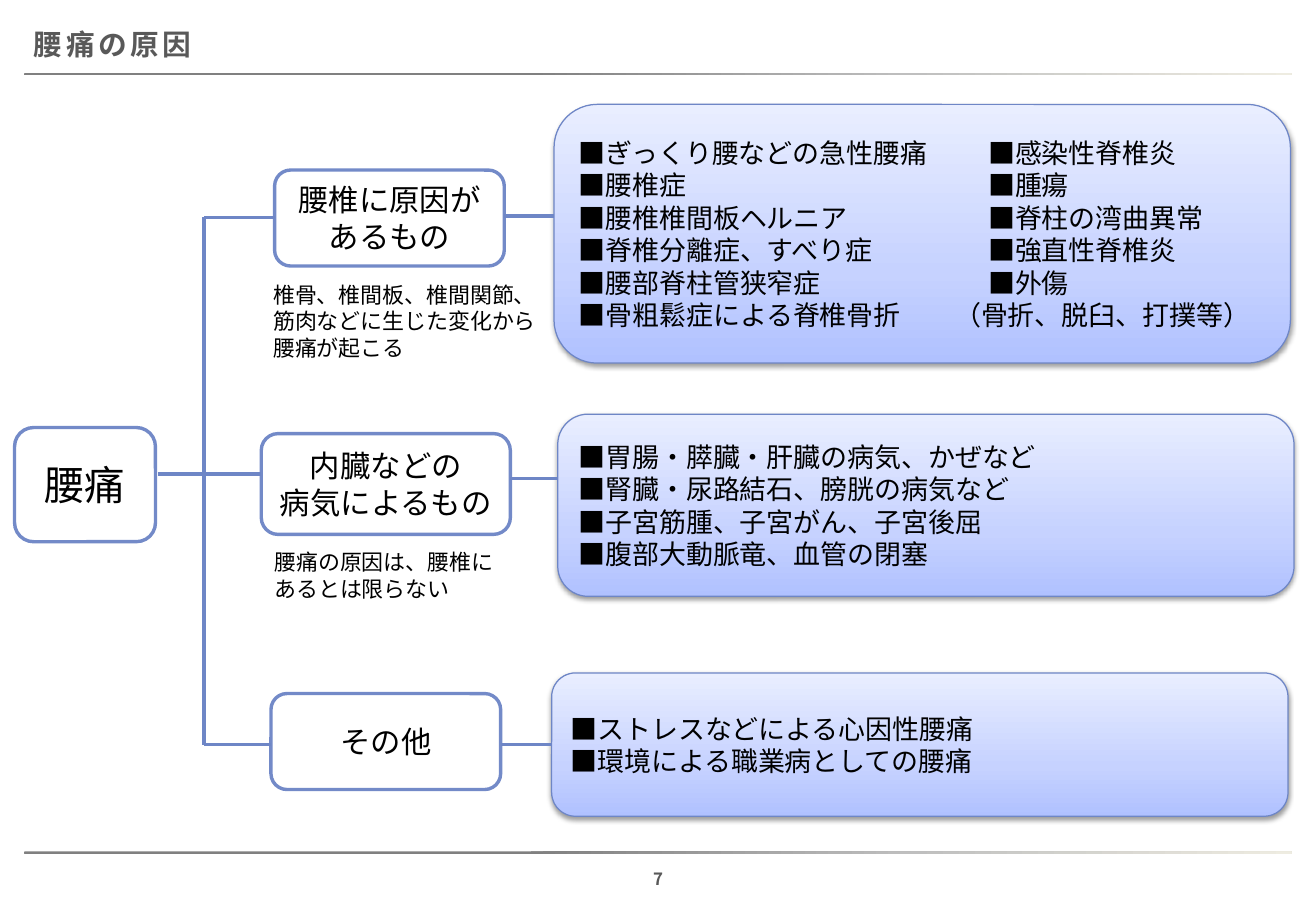
from lxml import etree
from pptx import Presentation
from pptx.dml.color import RGBColor
from pptx.enum.shapes import MSO_CONNECTOR, MSO_SHAPE
from pptx.enum.text import MSO_ANCHOR, PP_ALIGN
from pptx.oxml import parse_xml
from pptx.oxml.ns import nsdecls, qn
from pptx.util import Inches, Pt

ROUND = MSO_SHAPE.ROUNDED_RECTANGLE
STRAIGHT = MSO_CONNECTOR.STRAIGHT
CENTER, LEFT, JUSTIFY = PP_ALIGN.CENTER, PP_ALIGN.LEFT, PP_ALIGN.JUSTIFY
MIDDLE, TOP = MSO_ANCHOR.MIDDLE, MSO_ANCHOR.TOP
JP, LATIN = "Noto Sans CJK JP", "Calibri"
BLACK, GREY, WHITE = "000000", "595959", "FFFFFF"
BOX_LINE, LINK_LINE = "738AC8", "6E86C6"
BAR_STOPS = [(0, "808080"), (40, "808080"), (70, "BFBFBF"), (100, "EEECE1")]
PANEL_STOPS = [(0, "B0C1FF"), (35, "C6D2FF"), (100, "E9EEFF")]
TRUNK_X = 1.68

BRANCHES = [
    dict(cause=["腰椎に原因が", "あるもの"], box=(2.26, 1.4, 1.89, 0.79),
         panel=(4.56, 0.86, 6.06, 2.13), stem_y=1.79, link_y=1.78,
         note="椎骨、椎間板、椎間関節、筋肉などに生じた変化から腰痛が起こる",
         note_box=(2.15, 2.27, 2.36, 0.76),
         items=["■ぎっくり腰などの急性腰痛\t■感染性脊椎炎",
                "■腰椎症\t■腫瘍",
                "■腰椎椎間板ヘルニア\t■脊柱の湾曲異常",
                "■脊椎分離症、すべり症\t■強直性脊椎炎",
                "■腰部脊柱管狭窄症\t■外傷",
                "■骨粗鬆症による脊椎骨折\t（骨折、脱臼、打撲等）"]),
    dict(cause=["内臓などの", "病気によるもの"], box=(2.15, 3.57, 2.05, 0.83),
         panel=(4.59, 3.41, 6.06, 1.5), stem_y=3.9, link_y=3.94,
         note="腰痛の原因は、腰椎にあるとは限らない",
         note_box=(2.16, 4.47, 2.15, 0.54),
         items=["■胃腸・膵臓・肝臓の病気、かぜなど",
                "■腎臓・尿路結石、膀胱の病気など",
                "■子宮筋腫、子宮がん、子宮後屈",
                "■腹部大動脈竜、血管の閉塞"]),
    dict(cause=["その他"], box=(2.23, 5.71, 1.89, 0.79),
         panel=(4.54, 5.54, 6.06, 1.18), stem_y=6.13, link_y=6.13,
         items=["■ストレスなどによる心因性腰痛",
                "■環境による職業病としての腰痛"]),
]


def rgb(color):
    return RGBColor.from_string(color)


def add_text(sp, lines, size, font=JP, color=BLACK, bold=False, align=LEFT,
             anchor=MIDDLE):
    tf = sp.text_frame
    tf.word_wrap = True
    tf.vertical_anchor = anchor
    for i, line in enumerate(lines):
        p = tf.add_paragraph() if i else tf.paragraphs[0]
        p.alignment = align
        if "\t" in line:
            stop = 3.09 if "\t（" in line else 3.37
            tabs = etree.SubElement(p._p.get_or_add_pPr(), qn("a:tabLst"))
            etree.SubElement(tabs, qn("a:tab"), pos=str(Inches(stop)), algn="l")
        r = p.add_run()
        r.text = line
        r.font.name = font
        r.font.size = Pt(size)
        r.font.bold = bold
        r.font.color.rgb = rgb(color)
        etree.SubElement(r._r.get_or_add_rPr(), qn("a:ea"), typeface=JP)
    return tf


def add_label(s, box, lines, size, margin=None, **style):
    sp = s.shapes.add_textbox(*map(Inches, box))
    tf = add_text(sp, lines, size, **style)
    if margin is not None:
        tf.margin_left = Inches(margin)
        tf.margin_top = tf.margin_right = tf.margin_bottom = 0
    return tf


def add_round(s, box, line=None, width=0):
    sp = s.shapes.add_shape(ROUND, *map(Inches, box))
    sp.shadow.inherit = False
    if line:
        sp.line.color.rgb = rgb(line)
        sp.line.width = Pt(width)
    else:
        sp.line.fill.background()
    return sp


def fill_gradient(sp, stops, angle):
    gs = "".join(f'<a:gs pos="{pos * 1000}"><a:srgbClr val="{color}"/></a:gs>'
                 for pos, color in stops)
    grad = parse_xml(f'<a:gradFill {nsdecls("a")} rotWithShape="1"><a:gsLst>{gs}'
                     f'</a:gsLst><a:lin ang="{angle * 60000}" scaled="0"/></a:gradFill>')
    sp._element.spPr.find(qn("a:prstGeom")).addnext(grad)


def add_shadow(sp):
    effects = sp._element.spPr.find(qn("a:effectLst"))
    effects.append(parse_xml(
        f'<a:outerShdw {nsdecls("a")} blurRad="{Pt(3.1)}" dist="{Pt(1.6)}" '
        'dir="5400000" rotWithShape="0"><a:srgbClr val="000000">'
        '<a:alpha val="38000"/></a:srgbClr></a:outerShdw>'))


def add_link(s, x1, y1, x2, y2):
    link = s.shapes.add_connector(STRAIGHT, *map(Inches, (x1, y1, x2, y2)))
    link.line.color.rgb = rgb(LINK_LINE)
    link.line.width = Pt(2.25)
    etree.SubElement(link._element.spPr, qn("a:effectLst"))


def add_frame(s, title, number):
    for y in (0.6, 7.01):
        fill_gradient(add_round(s, (0.2, y, 10.43, 0.02)), BAR_STOPS, 0)
    tf = add_label(s, (0, 0.13, 10.83, 0.47), [title], 17, margin=0.28,
                   color=GREY, bold=True, align=JUSTIFY)
    p = tf.paragraphs[0]
    p.space_after = Pt(9)
    p.runs[0]._r.get_or_add_rPr().set("spc", "200")
    add_label(s, (4.15, 7.07, 2.53, 0.33), [number], 10, margin=0,
              color=GREY, bold=True, align=CENTER)


def add_node(s, box, lines, size):
    sp = add_round(s, box, BOX_LINE, 2)
    sp.fill.solid()
    sp.fill.fore_color.rgb = rgb(WHITE)
    add_text(sp, lines, size, font=LATIN, align=CENTER)


def add_panel(s, box, items):
    sp = add_round(s, box, LINK_LINE, 0.75)
    fill_gradient(sp, PANEL_STOPS, 270)
    add_shadow(sp)
    add_text(sp, items, 16)


def add_branch(s, branch, stem_x):
    left, _, width, _ = branch["box"]
    add_node(s, branch["box"], branch["cause"], 18)
    add_panel(s, branch["panel"], branch["items"])
    if "note" in branch:
        add_label(s, branch["note_box"], [branch["note"]], 13, anchor=TOP)
    add_link(s, stem_x, branch["stem_y"], left, branch["stem_y"])
    add_link(s, left + width, branch["link_y"], branch["panel"][0], branch["link_y"])


def add_tree(s, root_box, root, branches):
    add_node(s, root_box, [root], 24)
    root_edge = root_box[0] + root_box[2] + 0.02
    for branch, stem_x in zip(branches, (TRUNK_X, root_edge, TRUNK_X)):
        add_branch(s, branch, stem_x)
    add_link(s, TRUNK_X, branches[0]["stem_y"], TRUNK_X, branches[-1]["stem_y"])


def main():
    prs = Presentation()
    prs.slide_width, prs.slide_height = Inches(10.83), Inches(7.5)
    s = prs.slides.add_slide(prs.slide_layouts[6])
    add_frame(s, "腰痛の原因", "7")
    add_tree(s, (0.12, 3.52, 1.16, 0.94), "腰痛", BRANCHES)
    prs.save("out.pptx")


if __name__ == "__main__":
    main()
